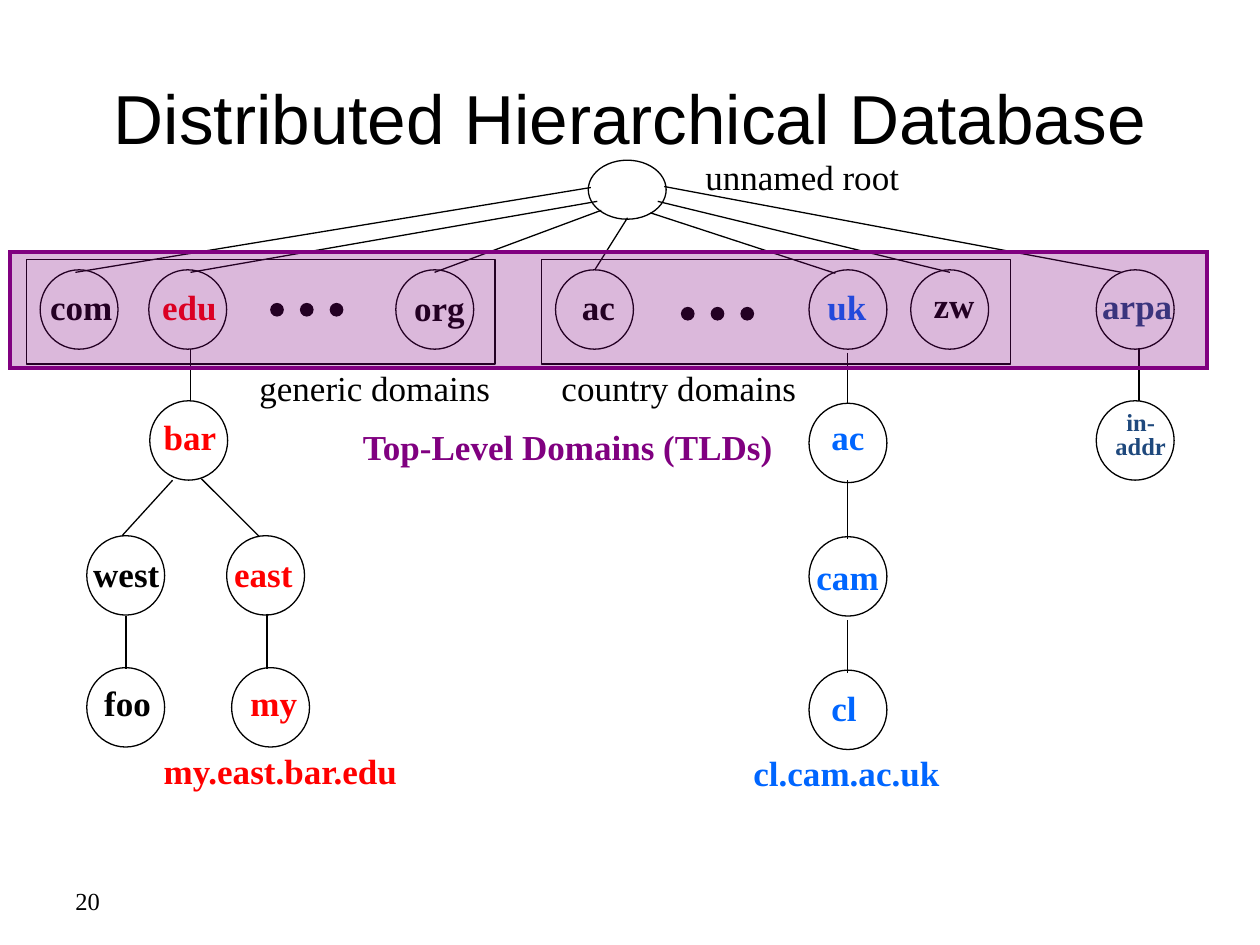
from lxml.etree import SubElement
from pptx import Presentation
from pptx.dml.color import RGBColor
from pptx.enum.shapes import MSO_CONNECTOR, MSO_SHAPE
from pptx.enum.text import MSO_ANCHOR, MSO_AUTO_SIZE, PP_ALIGN
from pptx.oxml.ns import qn
from pptx.util import Cm, Pt

COLORS = {"black": "000000", "red": "FF0000", "blue": "0066FF",
          "navy": "1F497D", "purple": "800080"}
SERIF = "Times New Roman"
NODE_W, NODE_H = 1.57, 1.6
LABEL_H = 1.1
LABEL_SLACK = 0.1  # spare width that keeps each label on one line
TLD_Y = 5.44

# node x, node y, label x, label y, label width, text, colour
NODES = [
    (0.81, TLD_Y, 0.76, 5.64, 1.75, "com", "black"),
    (3.0, TLD_Y, 3.02, 5.64, 1.6, "edu", "red"),
    (7.98, TLD_Y, 8.1, 5.65, 1.55, "org", "black"),
    (11.2, TLD_Y, 11.48, 5.64, 1.17, "ac", "black"),
    (16.31, TLD_Y, 16.43, 5.64, 1.3, "uk", "blue"),
    (18.36, TLD_Y, 18.57, 5.59, 1.35, "zw", "black"),
    (22.1, TLD_Y, 21.97, 5.61, 1.93, "arpa", "navy"),
    (3.02, 8.08, 3.05, 8.26, 1.57, "bar", "red"),
    (1.75, 10.8, 1.63, 11.02, 1.91, "west", "black"),
    (4.57, 10.8, 4.47, 11.02, 1.73, "east", "red"),
    (1.75, 13.46, 1.85, 13.61, 1.45, "foo", "black"),
    (4.67, 13.46, 4.8, 13.61, 1.47, "my", "red"),
    (16.31, 8.13, 16.51, 8.26, 1.17, "ac", "blue"),
    (16.31, 10.82, 16.21, 11.07, 1.75, "cam", "blue"),
    (16.31, 13.51, 16.51, 13.72, 1.02, "cl", "blue"),
]

# x, y, width, text, colour, bold
CAPTIONS = [
    (13.97, 3.02, 4.42, "unnamed root", "black", False),
    (4.98, 7.26, 5.16, "generic domains", "black", False),
    (11.07, 7.26, 5.23, "country domains", "black", False),
    (3.05, 14.99, 5.31, "my.east.bar.edu", "red", True),
    (14.94, 15.02, 4.29, "cl.cam.ac.uk", "blue", True),
]

ROOT_LINKS = [
    (11.91, 3.78, 1.52, 5.49), (12.04, 4.06, 3.84, 5.49),
    (12.12, 4.24, 8.76, 5.49), (12.65, 4.39, 11.99, 5.44),
    (13.39, 3.76, 22.61, 5.49), (13.26, 4.06, 19.15, 5.49),
    (13.11, 4.29, 16.84, 5.51),
]
CHILD_LINKS = [
    (3.84, 7.04, 3.84, 8.08), (3.48, 9.68, 2.46, 10.8),
    (4.06, 9.65, 5.23, 10.82), (2.54, 12.42, 2.54, 13.49),
    (5.38, 12.37, 5.38, 13.49), (17.09, 7.11, 17.09, 8.13),
    (17.09, 9.68, 17.09, 10.87), (17.09, 12.5, 17.09, 13.56),
    (22.96, 7.01, 22.96, 8.08),
]


def rgb(name):
    return RGBColor.from_string(COLORS[name])


def add_run(p, text, color="black", size=20, bold=False, font=SERIF):
    r = p.add_run()
    r.text = text
    r.font.name, r.font.size, r.font.bold = font, Pt(size), bold
    r.font.color.rgb = rgb(color)


def add_outline(s, kind, x, y, w, h, fill=None, line="black", width=0.75):
    sp = s.shapes.add_shape(kind, Cm(x), Cm(y), Cm(w), Cm(h))
    sp.shadow.inherit = False
    if fill:
        sp.fill.solid()
        sp.fill.fore_color.rgb = rgb(fill)
    else:
        sp.fill.background()
    sp.line.color.rgb = rgb(line)
    sp.line.width = Pt(width)
    return sp


def add_label(s, x, y, w, lines, color="black", bold=True, size=20,
              h=LABEL_H, align=PP_ALIGN.LEFT, spacing=None):
    """Add an unwrapped text box with one paragraph for each line."""
    tf = s.shapes.add_textbox(Cm(x), Cm(y), Cm(w + LABEL_SLACK),
                              Cm(h)).text_frame
    tf.word_wrap = False
    tf.auto_size = MSO_AUTO_SIZE.SHAPE_TO_FIT_TEXT
    for i, text in enumerate(lines):
        p = tf.add_paragraph() if i else tf.paragraphs[0]
        p.alignment = align
        p.line_spacing = spacing
        add_run(p, text, color, size, bold)
    return tf


def add_node(s, x, y):
    add_outline(s, MSO_SHAPE.OVAL, x, y, NODE_W, NODE_H)


def add_dots(s, x, y):
    for i in range(3):
        add_outline(s, MSO_SHAPE.OVAL, x + 0.6 * i, y, 0.25, 0.25, "black")


def add_link(s, x1, y1, x2, y2):
    c = s.shapes.add_connector(MSO_CONNECTOR.STRAIGHT,
                               Cm(x1), Cm(y1), Cm(x2), Cm(y2))
    c.line.color.rgb = rgb("black")
    c.line.width = Pt(0.75)
    SubElement(c._element.spPr, qn("a:effectLst"))


def add_band(s):
    """Add the translucent, sharp-cornered band over the top-level domains."""
    sp = add_outline(s, MSO_SHAPE.RECTANGLE, 0.2, 5.08, 24.13, 2.34,
                     "purple", "purple", 2)
    spPr = sp._element.spPr
    SubElement(spPr.find(qn("a:solidFill"))[0], qn("a:alpha"), val="28000")
    SubElement(spPr.find(qn("a:ln")), qn("a:miter"), lim="800000")


def set_title(s, text):
    title = s.shapes.title
    title.left, title.top = Cm(1.27), Cm(0.76)
    title.width, title.height = Cm(22.86), Cm(3.18)
    tf = title.text_frame
    tf.auto_size = MSO_AUTO_SIZE.NONE
    tf.vertical_anchor = MSO_ANCHOR.MIDDLE
    p = tf.paragraphs[0]
    p.alignment = PP_ALIGN.CENTER
    add_run(p, text, size=39.6, font="Arial")


def add_page_number(s, text):
    tf = s.shapes.add_textbox(Cm(1.27), Cm(17.65), Cm(5.92), Cm(1.02)).text_frame
    tf.word_wrap = True
    tf.vertical_anchor = MSO_ANCHOR.MIDDLE
    add_run(tf.paragraphs[0], text, size=14)


def main():
    prs = Presentation()
    prs.slide_width, prs.slide_height = Cm(25.4), Cm(19.05)
    s = prs.slides.add_slide(prs.slide_layouts[5])

    set_title(s, "Distributed Hierarchical Database")
    add_page_number(s, "20")
    for x in (0.53, 10.92):
        add_outline(s, MSO_SHAPE.RECTANGLE, x, 5.23, 9.45, 2.11)
    add_outline(s, MSO_SHAPE.OVAL, 11.86, 3.23, NODE_W, 1.19)
    for x, y, label_x, label_y, w, text, color in NODES:
        add_node(s, x, y)
        add_label(s, label_x, label_y, w, [text], color)
    add_node(s, 22.1, 8.08)
    add_label(s, 22.17, 8.2, 1.55, ["in-", "addr"], "navy", size=14, h=1.24,
              align=PP_ALIGN.CENTER, spacing=0.8)
    add_dots(s, 5.46, 6.12)
    add_dots(s, 13.74, 6.2)
    for link in ROOT_LINKS + CHILD_LINKS:
        add_link(s, *link)
    for x, y, w, text, color, bold in CAPTIONS:
        add_label(s, x, y, w, [text], color, bold)
    add_band(s)
    tf = add_label(s, 6.99, 8.46, 8.81, ["Top-Level Domains (TLDs)"], "purple",
                   align=PP_ALIGN.CENTER)
    tf.vertical_anchor = MSO_ANCHOR.MIDDLE

    prs.save("out.pptx")


if __name__ == "__main__":
    main()
